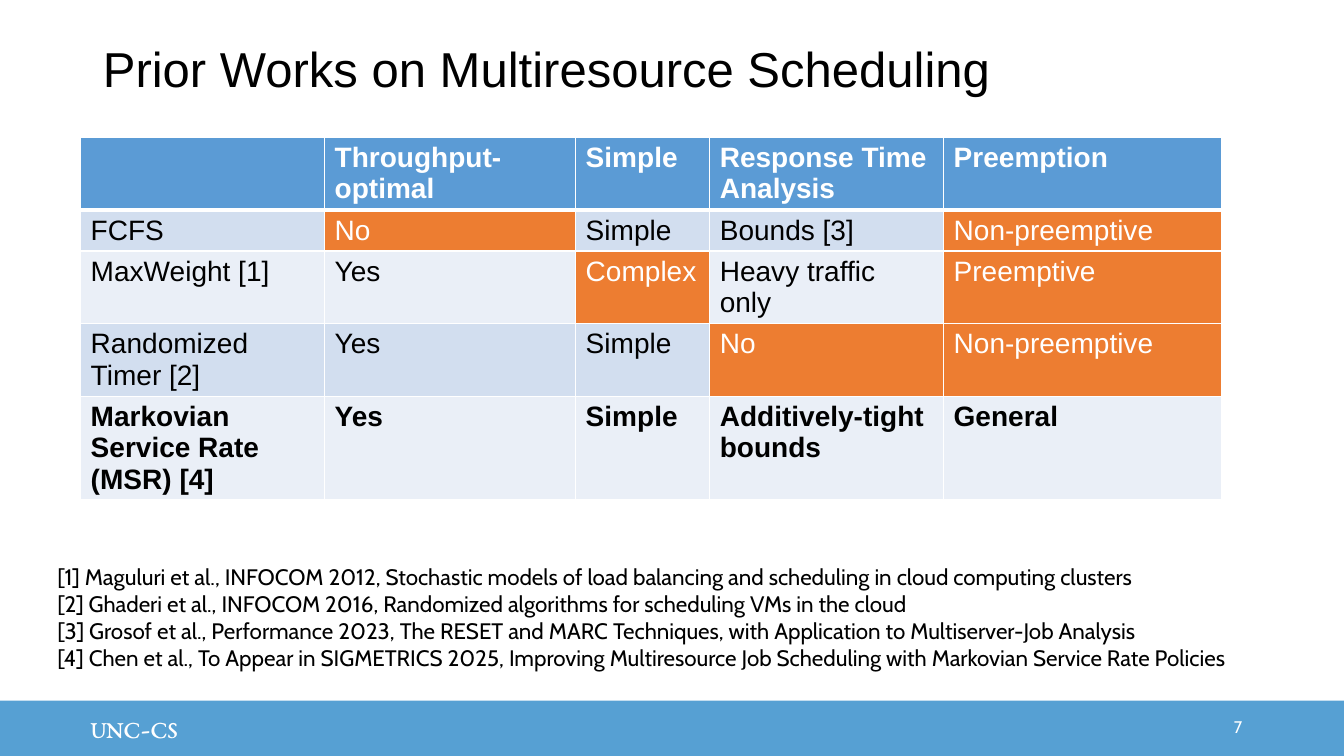
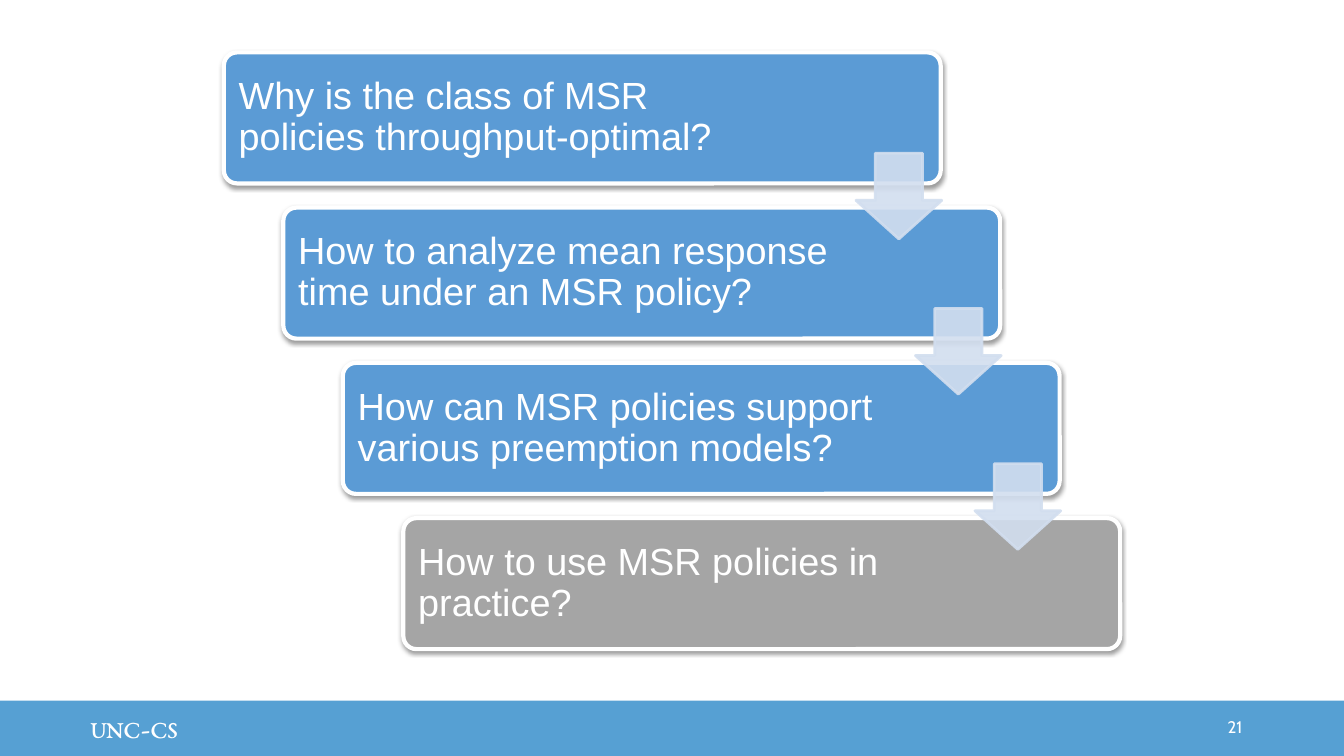
from dataclasses import dataclass
from typing import Any, Optional

import lxml.etree
import pptx
import pptx.dml.color
import pptx.enum.shapes
import pptx.enum.text
import pptx.oxml.ns
import pptx.util

RGB = pptx.dml.color.RGBColor
SHAPE = pptx.enum.shapes.MSO_SHAPE
ALIGN = pptx.enum.text.PP_ALIGN
ANCHOR = pptx.enum.text.MSO_ANCHOR
qn = pptx.oxml.ns.qn

WHITE = RGB(0xFF, 0xFF, 0xFF)
BLACK = RGB(0x00, 0x00, 0x00)
BAND = RGB(0x56, 0xA0, 0xD3)
BLUE = RGB(0x5B, 0x9B, 0xD5)
PALE = RGB(0xD2, 0xDE, 0xEF)
LIGHT = RGB(0xEA, 0xEF, 0xF7)
ORANGE = RGB(0xED, 0x7D, 0x31)
GREY = RGB(0xA5, 0xA5, 0xA5)

SCALE = 9144
WIDTH, HEIGHT = 1333, 750


@dataclass(frozen=True)
class Box:
    left: int
    top: int
    width: int
    height: int

    def emu(self) -> list[int]:
        return [px(n) for n in (self.left, self.top, self.width, self.height)]


@dataclass(frozen=True)
class Style:
    font: str
    size: int
    color: RGB
    bold: bool = False
    align: Any = ALIGN.LEFT
    space: Optional[float] = None


@dataclass(frozen=True)
class Card:
    text: str
    color: RGB = BLUE


TITLE = Style("Arial", 35, BLACK, space=0.9)
BRAND = Style("EB Garamond", 18, WHITE)
NUMBER = Style("Cabin", 12, WHITE, align=ALIGN.RIGHT)
SOURCE = Style("Cabin", 16, BLACK)
STEP = Style("Arial", 27, WHITE, space=0.9)

COLS = [242, 249, 133, 232, 276]
ROWS = [72, 41, 72, 72, 103]
GRID = [
    ["", "Throughput-optimal", "Simple", "Response Time Analysis", "Preemption"],
    ["FCFS", "No", "Simple", "Bounds [3]", "Non-preemptive"],
    ["MaxWeight [1]", "Yes", "Complex", "Heavy traffic only", "Preemptive"],
    ["Randomized Timer [2]", "Yes", "Simple", "No", "Non-preemptive"],
    ["Markovian Service Rate (MSR) [4]", "Yes", "Simple",
     "Additively-tight bounds", "General"],
]
LIMITS = {"No", "Complex", "Preemptive", "Non-preemptive"}

SOURCES = [
    "[1] Maguluri et al., INFOCOM 2012, Stochastic models of load balancing "
    "and scheduling in cloud computing clusters",
    "[2] Ghaderi et al., INFOCOM 2016, Randomized algorithms for scheduling "
    "VMs in the cloud",
    "[3] Grosof et al., Performance 2023, The RESET and MARC Techniques, with "
    "Application to Multiserver-Job Analysis",
    "[4] Chen et al., To Appear in SIGMETRICS 2025, Improving Multiresource "
    "Job Scheduling with Markovian Service Rate Policies",
]

CARDS = [
    Card("Why is the class of MSR policies throughput-optimal?"),
    Card("How to analyze mean response time under an MSR policy?"),
    Card("How can MSR policies support various preemption models?"),
    Card("How to use MSR policies in practice?", GREY),
]


def px(count: int) -> pptx.util.Emu:
    return pptx.util.Emu(count * SCALE)


def write(frame: Any, text: str, style: Style) -> None:
    frame.text = text
    for para in frame.paragraphs:
        para.alignment = style.align
        if style.space:
            para.line_spacing = style.space
        for run in para.runs:
            run.font.name = style.font
            run.font.size = pptx.util.Pt(style.size)
            run.font.bold = style.bold
            run.font.color.rgb = style.color


def frame_up(frame: Any, sides: tuple[int, int, int, int], anchor: Any = ANCHOR.MIDDLE) -> None:
    frame.word_wrap = True
    frame.auto_size = pptx.enum.text.MSO_AUTO_SIZE.NONE
    frame.vertical_anchor = anchor
    (frame.margin_left, frame.margin_top,
     frame.margin_right, frame.margin_bottom) = map(px, sides)


def add_form(slide: Any, kind: Any, box: Box, fill: RGB,
             line: Optional[RGB] = None, weight: int = 0) -> Any:
    form = slide.shapes.add_shape(kind, *box.emu())
    form.shadow.inherit = False
    form.fill.solid()
    form.fill.fore_color.rgb = fill
    if line is None:
        form.line.fill.background()
    else:
        form.line.color.rgb = line
        form.line.width = pptx.util.Pt(weight)
    return form


def add_text(slide: Any, box: Box, text: str, style: Style,
             sides: tuple[int, int, int, int], anchor: Any) -> None:
    frame = slide.shapes.add_textbox(*box.emu()).text_frame
    frame_up(frame, sides, anchor)
    write(frame, text, style)


def add_band(slide: Any) -> None:
    band = add_form(slide, SHAPE.RECTANGLE, Box(0, 695, WIDTH, 55), BAND)
    frame_up(band.text_frame, (90, 5, 10, 5))
    write(band.text_frame, "UNC-CS", BRAND)
    slide.slide_layout.slide_master.shapes.element.append(band.element)


def add_number(slide: Any, number: int) -> None:
    add_text(slide, Box(1092, 701, 150, 40), str(number), NUMBER,
             (10, 5, 10, 5), ANCHOR.MIDDLE)


def set_title(slide: Any, text: str) -> None:
    title = slide.shapes.title
    title.left, title.top, title.width, title.height = Box(92, -1, 1150, 145).emu()
    frame_up(title.text_frame, (10, 10, 10, 10))
    write(title.text_frame, text, TITLE)


def edge_cell(cell: Any, row: int) -> None:
    props = cell._tc.get_or_add_tcPr()
    heavy = {0: "lnB", 1: "lnT"}.get(row)
    for place, side in enumerate(("lnL", "lnR", "lnT", "lnB")):
        width = pptx.util.Pt(3 if side == heavy else 1)
        line = lxml.etree.Element(qn(f"a:{side}"), w=str(width))
        fill = lxml.etree.SubElement(line, qn("a:solidFill"))
        lxml.etree.SubElement(fill, qn("a:srgbClr"), val=str(WHITE))
        props.insert(place, line)


def add_grid(slide: Any) -> None:
    box = Box(80, 136, sum(COLS), sum(ROWS))
    table = slide.shapes.add_table(len(ROWS), len(COLS), *box.emu()).table
    for col, width in zip(table.columns, COLS):
        col.width = px(width)
    for row, height in zip(table.rows, ROWS):
        row.height = px(height)
    last = len(ROWS) - 1
    for row, texts in enumerate(GRID):
        for col, text in enumerate(texts):
            cell = table.cell(row, col)
            limit = text in LIMITS
            fill = ORANGE if limit else BLUE if row == 0 else PALE if row % 2 else LIGHT
            ink = WHITE if limit or row == 0 else BLACK
            cell.fill.solid()
            cell.fill.fore_color.rgb = fill
            edge_cell(cell, row)
            write(cell.text_frame, text, Style("Arial", 20, ink, row in (0, last)))


def add_shade(form: Any) -> None:
    effects = form.element.spPr.find(qn("a:effectLst"))
    shade = lxml.etree.SubElement(effects, qn("a:outerShdw"), blurRad="40000",
                                  dist="20000", dir="5400000", rotWithShape="0")
    color = lxml.etree.SubElement(shade, qn("a:srgbClr"), val=str(BLACK))
    lxml.etree.SubElement(color, qn("a:alpha"), val="38000")


def add_steps(slide: Any) -> None:
    boxes = [Box(222 + 178 * i // 3, 52 + 154 * i, 711, 130) for i in range(len(CARDS))]
    for card, box in zip(CARDS, boxes):
        form = add_form(slide, SHAPE.ROUNDED_RECTANGLE, box, card.color, WHITE, 3)
        form.adjustments[0] = 0.1
        add_shade(form)
        frame_up(form.text_frame, (11, 11, 155, 11))
        write(form.text_frame, card.text, STEP)
    for box in boxes[:-1]:
        place = Box(box.left + 627, box.top + 100, 85, 85)
        arrow = add_form(slide, SHAPE.DOWN_ARROW, place, PALE, PALE, 2)
        arrow.adjustments[0] = 0.55
        arrow.adjustments[1] = 0.45
        for color in arrow.element.spPr.iter(qn("a:srgbClr")):
            lxml.etree.SubElement(color, qn("a:alpha"), val="90000")


def main() -> None:
    deck = pptx.Presentation()
    deck.slide_width, deck.slide_height = px(WIDTH), px(HEIGHT)

    works = deck.slides.add_slide(deck.slide_layouts[5])
    add_band(works)
    set_title(works, "Prior Works on Multiresource Scheduling")
    add_number(works, 7)
    add_grid(works)
    add_text(works, Box(47, 549, 1197, 128), "\n".join(SOURCES), SOURCE,
             (10, 10, 10, 10), ANCHOR.TOP)

    steps = deck.slides.add_slide(deck.slide_layouts[6])
    add_number(steps, 21)
    add_steps(steps)

    deck.save("out.pptx")


if __name__ == "__main__":
    main()
